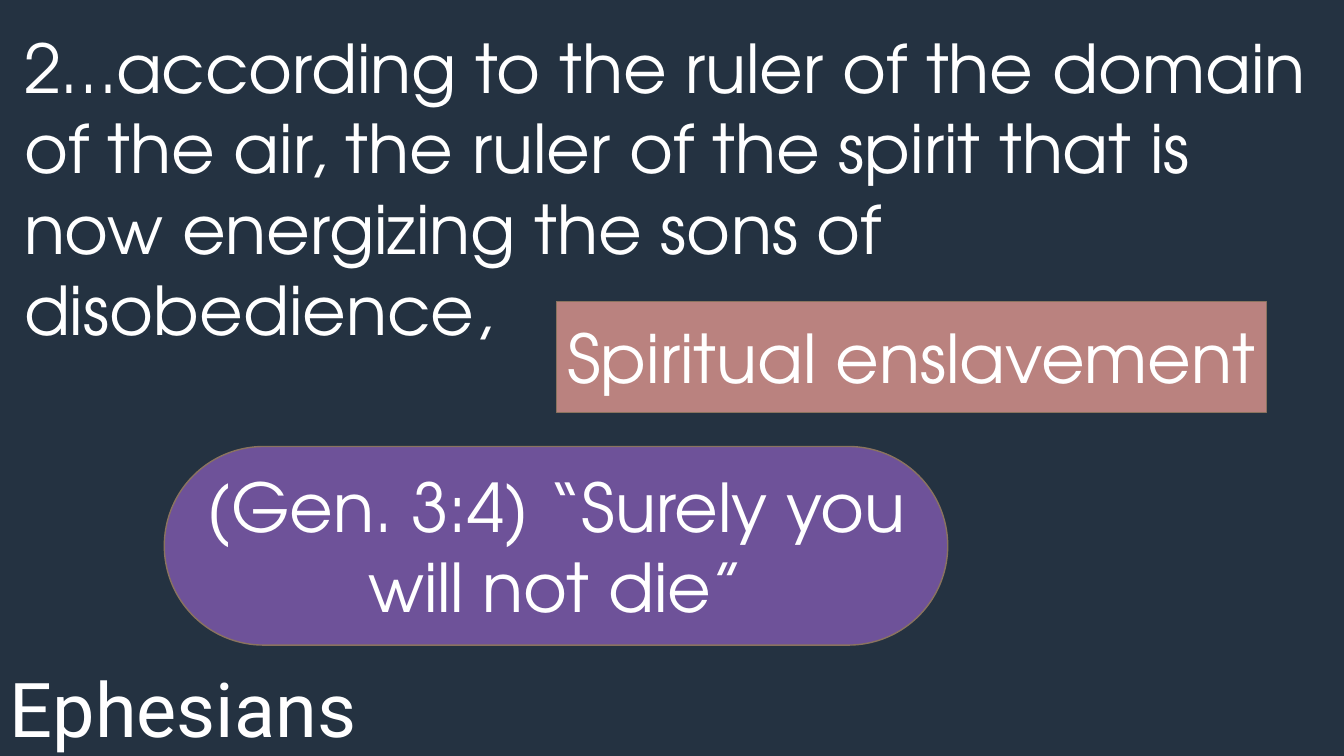
from dataclasses import dataclass

from pptx import Presentation
from pptx import util as u
from pptx.dml.color import RGBColor
from pptx.enum import shapes, text


@dataclass(frozen=True)
class Theme:
    """Colours, fonts and type sizes of the slide."""
    background: str = "243241"
    ink: str = "FFFFFF"
    rose: str = "BA827F"
    purple: str = "6E5299"
    outline: str = "8A735F"
    verse_font: str = "TeX Gyre Adventor"
    book_font: str = "Roboto"
    verse_size: int = 48
    book_size: int = 54


THEME = Theme()


def rgb(colour):
    """Turn a hex string into a colour."""
    return RGBColor.from_string(colour)


def write(tf, words, font=THEME.verse_font, size=THEME.verse_size,
          align=text.PP_ALIGN.LEFT):
    """Write one run of text into a frame."""
    p = tf.paragraphs[0]
    p.alignment = align
    r = p.add_run()
    r.text = words
    r.font.name = font
    r.font.size = u.Pt(size)
    r.font.color.rgb = rgb(THEME.ink)


def add_passage(s, box, words, **style):
    """Place left-aligned, wrapping text in the box."""
    tf = s.shapes.add_textbox(*map(u.Inches, box)).text_frame
    tf.word_wrap = True
    write(tf, words, **style)


def add_callout(s, box, kind, fill, words, wrap=True):
    """Place a filled shape with centred text in the box."""
    sp = s.shapes.add_shape(kind, *map(u.Inches, box))
    sp.shadow.inherit = False
    sp.fill.solid()
    sp.fill.fore_color.rgb = rgb(fill)
    sp.line.color.rgb = rgb(THEME.outline)
    sp.line.width = u.Pt(1)
    if len(sp.adjustments):
        sp.adjustments[0] = 0.5
    tf = sp.text_frame
    tf.word_wrap = wrap
    tf.vertical_anchor = text.MSO_ANCHOR.MIDDLE
    write(tf, words, align=text.PP_ALIGN.CENTER)


def add_verse_slide(prs):
    """Build the verse slide with its two callouts."""
    s = prs.slides.add_slide(prs.slide_layouts[6])
    s.background.fill.solid()
    s.background.fill.fore_color.rgb = rgb(THEME.background)
    add_passage(s, (0, 6.52, 3.89, 1.01), "Ephesians",
                font=THEME.book_font, size=THEME.book_size)
    add_passage(s, (0.14, 0.21, 13, 3.33),
                "2…according to the ruler of the domain of the air, the ruler "
                "of the spirit that is now energizing the sons of disobedience,")
    add_callout(s, (5.52, 2.99, 7.04, 1.1), shapes.MSO_SHAPE.RECTANGLE,
                THEME.rose, "Spiritual enslavement", wrap=False)
    add_callout(s, (1.63, 4.43, 7.77, 1.97), shapes.MSO_SHAPE.ROUNDED_RECTANGLE,
                THEME.purple, "(Gen. 3:4) “Surely you will not die”")


def main():
    """Create and save the presentation."""
    prs = Presentation()
    prs.slide_width, prs.slide_height = u.Inches(13.33), u.Inches(7.5)
    add_verse_slide(prs)
    prs.save("out.pptx")


if __name__ == "__main__":
    main()
